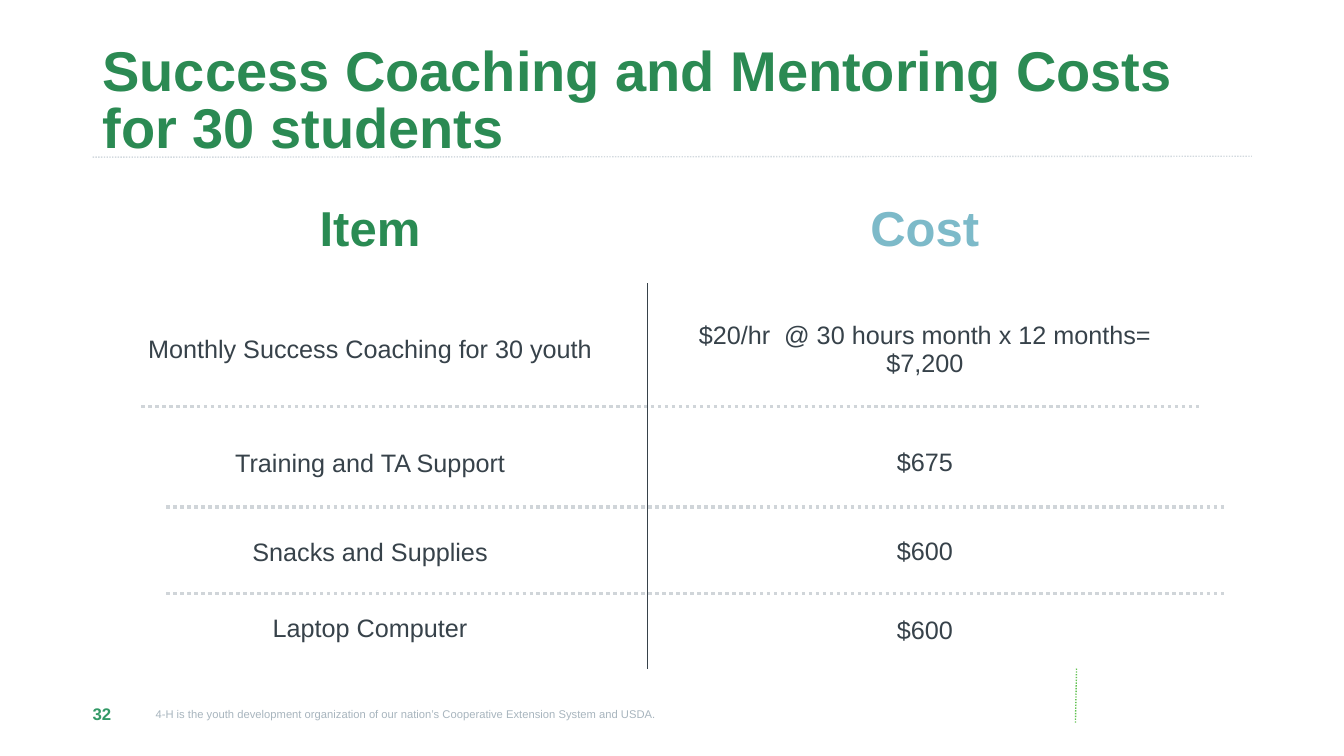
import dataclasses

import lxml.etree
import pptx
import pptx.dml.color
import pptx.enum.dml
import pptx.enum.shapes
import pptx.enum.text
import pptx.oxml
import pptx.oxml.ns
import pptx.util

Pt = pptx.util.Pt
ALIGN = pptx.enum.text.PP_ALIGN
MIDDLE = pptx.enum.text.MSO_ANCHOR.MIDDLE


@dataclasses.dataclass(frozen=True)
class Theme:
    font: str = "Arial"
    title_green: str = "2B8A53"
    header_green: str = "2A8B53"
    header_blue: str = "7DBAC9"
    number_green: str = "339966"
    accent_green: str = "61C250"
    body: str = "37424A"
    footer: str = "A8B5BE"
    title_rule: str = "D3DADF"
    row_rule: str = "D0D5D9"
    title_size: float = 40
    header_size: float = 35
    body_size: float = 18
    number_size: float = 12
    footer_size: float = 8


class SlideBuilder:
    def __init__(self, slide, theme):
        self.slide = slide
        self.theme = theme

    def style(self, paragraph, size, color, bold=False, align=ALIGN.LEFT, spacing=None):
        paragraph.alignment = align
        if spacing:
            paragraph.line_spacing = spacing
        font = paragraph.font
        font.name = self.theme.font
        font.size = Pt(size)
        font.bold = bold
        font.color.rgb = pptx.dml.color.RGBColor.from_string(color)

    def text(self, left, top, width, height, text, size, color, margins=(0, 0), **style):
        shape = self.slide.shapes.add_textbox(Pt(left), Pt(top), Pt(width), Pt(height))
        frame = shape.text_frame
        frame.word_wrap = True
        frame.vertical_anchor = MIDDLE
        frame.margin_left, frame.margin_right = map(Pt, margins)
        frame.text = text
        self.style(frame.paragraphs[0], size, color, **style)

    def dotted_line(self, start, end, color, width=1):
        connector = self.slide.shapes.add_connector(
            pptx.enum.shapes.MSO_CONNECTOR.STRAIGHT, *map(Pt, start + end))
        connector.line.color.rgb = pptx.dml.color.RGBColor.from_string(color)
        connector.line.width = Pt(width)
        connector.line.dash_style = pptx.enum.dml.MSO_LINE.ROUND_DOT
        lxml.etree.SubElement(connector._element.spPr, pptx.oxml.ns.qn("a:effectLst"))

    def cell_border(self, cell, side):
        border = pptx.oxml.parse_xml(
            f'<a:{side} {pptx.oxml.ns.nsdecls("a")} w="{Pt(1)}"><a:solidFill>'
            f'<a:srgbClr val="{self.theme.body}"/></a:solidFill></a:{side}>')
        cell._tc.get_or_add_tcPr().insert(0, border)

    def cell(self, cell, text, size, color, **style):
        cell.fill.background()
        cell.vertical_anchor = MIDDLE
        cell.margin_left = cell.margin_right = Pt(10)
        cell.margin_top = cell.margin_bottom = Pt(5)
        cell.text = text
        for paragraph in cell.text_frame.paragraphs:
            self.style(paragraph, size, color, align=ALIGN.CENTER, **style)

    def cost_table(self, left, top, column_width, heights, headers, rows):
        theme = self.theme
        frame = self.slide.shapes.add_table(
            len(heights), len(headers), Pt(left), Pt(top),
            Pt(column_width * len(headers)), Pt(sum(heights)))
        table = frame.table
        table.first_row = table.horz_banding = False
        style_id = table._tbl.tblPr.find(pptx.oxml.ns.qn("a:tableStyleId"))
        style_id.text = "{2D5ABB26-0587-4C30-8999-92F81FD0307C}"
        for column in table.columns:
            column.width = Pt(column_width)
        for row, height in zip(table.rows, heights):
            row.height = Pt(height)
        for index, (text, color) in enumerate(headers):
            self.cell(table.cell(0, index), text, theme.header_size, color,
                      bold=True, spacing=0.85)
        for row_index, entries in enumerate(rows, 1):
            for column_index, (text, spacing) in enumerate(entries):
                cell = table.cell(row_index, column_index)
                self.cell(cell, text, theme.body_size, theme.body, spacing=spacing)
                self.cell_border(cell, ("lnR", "lnL")[column_index])
        return table


def main():
    presentation = pptx.Presentation()
    presentation.slide_width, presentation.slide_height = Pt(960), Pt(540)
    theme = Theme()
    slide = presentation.slides.add_slide(presentation.slide_layouts[6])
    builder = SlideBuilder(slide, theme)

    builder.text(98, 495.4, 378, 29.5,
                 "4-H is the youth development organization of our nation’s "
                 "Cooperative Extension System and USDA.",
                 theme.footer_size, theme.footer, margins=(0, 7.2), align=ALIGN.RIGHT)
    builder.dotted_line((66.2, 112.3), (894.2, 111.6), theme.title_rule)
    builder.dotted_line((768.2, 516.2), (769, 476.6), theme.accent_green)
    builder.text(66.2, 495.4, 31, 29.5, "32", theme.number_size, theme.number_green, bold=True)
    builder.text(66.2, 35.3, 828, 76.3, "Success Coaching and Mentoring Costs for 30 students",
                 theme.title_size, theme.title_green, margins=(7.2, 7.2),
                 bold=True, spacing=0.85)

    table = builder.cost_table(
        66.2, 129.6, 396.3, (72.7, 95, 68.4, 59, 53.3),
        (("Item", theme.header_green), ("Cost", theme.header_blue)),
        ((("Monthly Success Coaching for 30 youth", None),
          ("$20/hr  @ 30 hours month x 12 months=\n$7,200", None)),
         (("Training and TA Support", None), ("$675", 0.85)),
         (("Snacks and Supplies", None), ("$600", 0.85)),
         (("Laptop Computer", 0.7), ("$600", 0.85))))
    table.cell(4, 0).text_frame.paragraphs[0].space_before = Pt(0)

    for left, top in ((100.8, 290.2), (118.8, 362.2), (118.8, 424.1)):
        builder.dotted_line((left, top), (left + 757.4, top), theme.row_rule, width=2.5)

    presentation.save("out.pptx")


if __name__ == "__main__":
    main()
